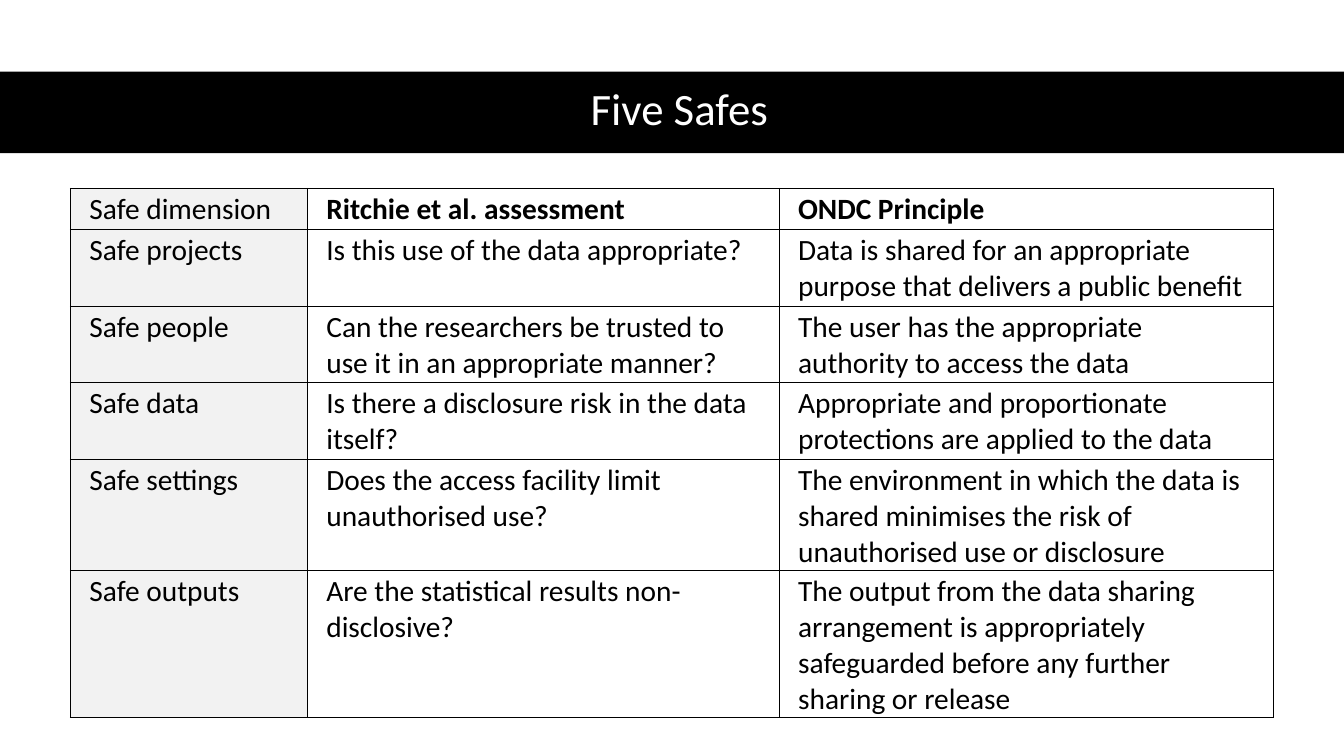
from lxml.etree import SubElement
from pptx import Presentation
from pptx.dml.color import RGBColor
from pptx.enum.shapes import MSO_SHAPE
from pptx.enum.text import MSO_ANCHOR, PP_ALIGN
from pptx.oxml import parse_xml
from pptx.oxml.ns import nsdecls, qn
from pptx.util import Pt

COLORS = {"black": "000000", "white": "FFFFFF", "label": "F2F2F2"}
FONT = "Calibri"
COLUMN_WIDTHS = [169.2, 337, 352.8]
HEADER_HEIGHT, ROW_HEIGHT = 29.5, 54.7
ROWS = [
    ("Safe dimension", "Ritchie et al. assessment", "ONDC Principle"),
    ("Safe projects", "Is this use of the data appropriate?",
     "Data is shared for an appropriate purpose that delivers a public benefit"),
    ("Safe people", "Can the researchers be trusted to use it in an appropriate manner?",
     "The user has the appropriate authority to access the data"),
    ("Safe data", "Is there a disclosure risk in the data itself?",
     "Appropriate and proportionate protections are applied to the data"),
    ("Safe settings", "Does the access facility limit unauthorised use?",
     "The environment in which the data is shared minimises the risk of "
     "unauthorised use or disclosure"),
    ("Safe outputs", "Are the statistical results non-disclosive?",
     "The output from the data sharing arrangement is appropriately "
     "safeguarded before any further sharing or release"),
]


def rgb(name):
    return RGBColor.from_string(COLORS[name])


def write_text(tf, text, *, size, color="black", bold=False, align=PP_ALIGN.LEFT,
               line=None, space=0):
    tf.word_wrap = True
    p = tf.paragraphs[0]
    p.alignment = align
    p.line_spacing = line
    p.space_before = p.space_after = Pt(space)
    r = p.add_run()
    r.text = text
    r.font.name, r.font.size, r.font.bold = FONT, Pt(size), bold
    r.font.color.rgb = rgb(color)


def add_band(s, left, top, width, height):
    sp = s.shapes.add_shape(MSO_SHAPE.RECTANGLE, Pt(left), Pt(top), Pt(width), Pt(height))
    sp.shadow.inherit = False
    sp.fill.solid()
    sp.fill.fore_color.rgb = rgb("black")
    sp.line.fill.background()
    # Keep the band behind the title placeholder.
    s.shapes.title._element.addprevious(sp._element)


def set_title(s, text, left, top, width, height):
    title = s.shapes.title
    title.left, title.top, title.width, title.height = map(Pt, (left, top, width, height))
    title.text_frame.vertical_anchor = MSO_ANCHOR.MIDDLE
    write_text(title.text_frame, text, size=32, color="white",
               align=PP_ALIGN.CENTER, line=0.9)


def set_borders(cell, color, width):
    tc_pr = cell._tc.get_or_add_tcPr()
    for i, side in enumerate(("lnL", "lnR", "lnT", "lnB")):
        ln = parse_xml(f'<a:{side} {nsdecls("a")} w="{Pt(width)}"/>')
        fill = SubElement(ln, qn("a:solidFill"))
        SubElement(fill, qn("a:srgbClr"), val=COLORS[color])
        tc_pr.insert(i, ln)


def format_cell(cell, text, fill, bold):
    cell.margin_left = cell.margin_right = Pt(13.5)
    cell.margin_top, cell.margin_bottom = Pt(2.2), Pt(0)
    cell.vertical_anchor = MSO_ANCHOR.TOP
    cell.fill.solid()
    cell.fill.fore_color.rgb = rgb(fill)
    set_borders(cell, "black", 1)
    write_text(cell.text_frame, text, size=21, bold=bold, space=2)


def add_safes_table(s, left, top):
    heights = [HEADER_HEIGHT] + [ROW_HEIGHT] * (len(ROWS) - 1)
    table = s.shapes.add_table(len(ROWS), len(COLUMN_WIDTHS), Pt(left), Pt(top),
                               Pt(sum(COLUMN_WIDTHS)), Pt(sum(heights))).table
    table.first_row = table.horz_banding = False
    for column, width in zip(table.columns, COLUMN_WIDTHS):
        column.width = Pt(width)
    for row, height in zip(table.rows, heights):
        row.height = Pt(height)
    for i, texts in enumerate(ROWS):
        for j, text in enumerate(texts):
            format_cell(table.cell(i, j), text, fill="white" if j else "label",
                        bold=i == 0 and j > 0)


def main():
    prs = Presentation()
    prs.slide_width, prs.slide_height = Pt(960), Pt(540)
    s = prs.slides.add_slide(prs.slide_layouts[5])
    add_band(s, 0, 51.1, 960, 58.3)
    set_title(s, "Five Safes", 43.9, 50.4, 882.7, 58.3)
    add_safes_table(s, 50.4, 134.6)
    prs.save("out.pptx")


if __name__ == "__main__":
    main()
